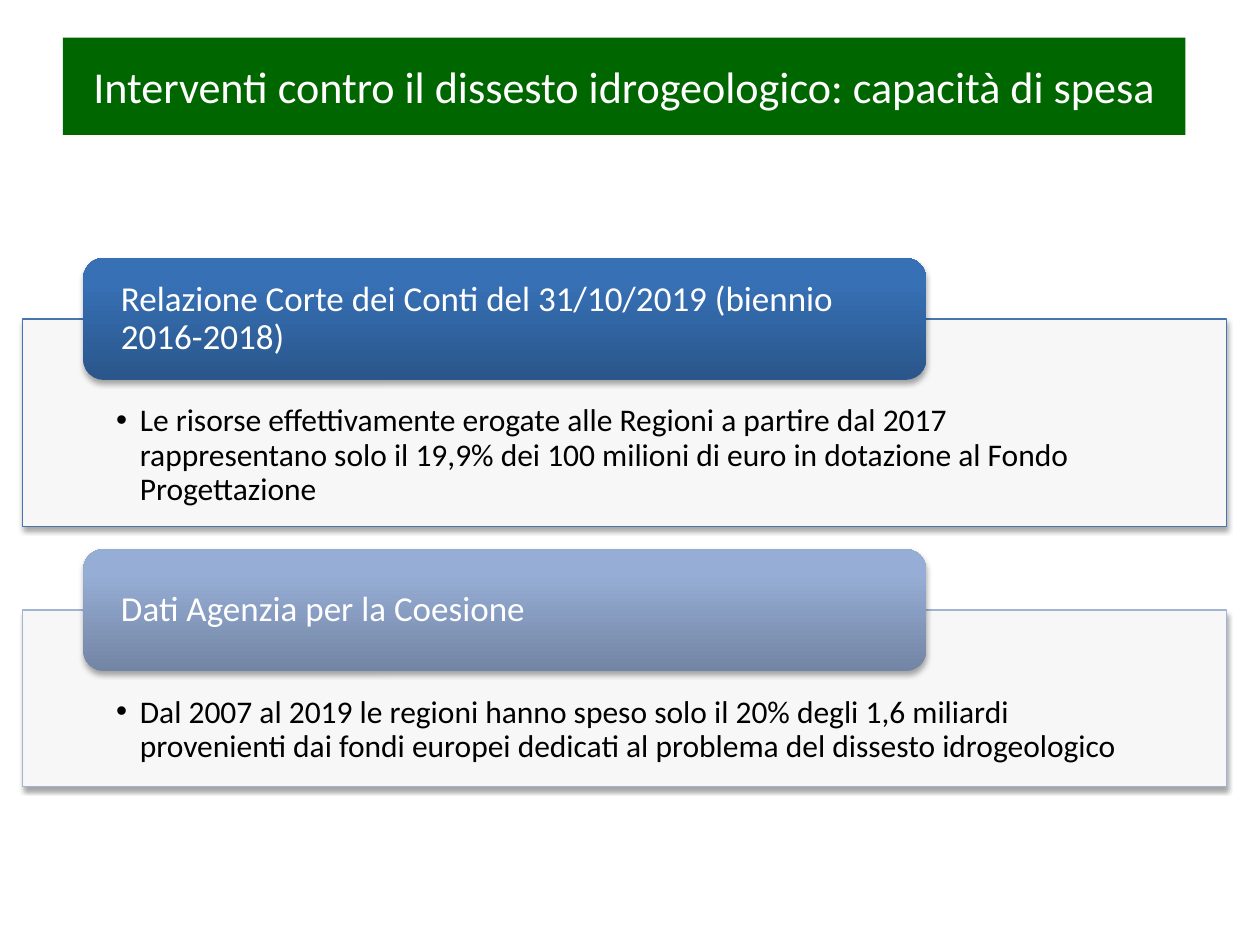
from lxml.etree import SubElement
from pptx import Presentation
from pptx.dml.color import RGBColor
from pptx.enum.shapes import MSO_SHAPE
from pptx.enum.text import MSO_ANCHOR, PP_ALIGN
from pptx.oxml import parse_xml
from pptx.oxml.ns import nsdecls, qn
from pptx.util import Cm, Pt

TITLE = "Interventi contro il dissesto idrogeologico: capacità di spesa"
SECTIONS = [
    {
        "heading": "Relazione Corte dei Conti del 31/10/2019 (biennio 2016-2018)",
        "detail": "Le risorse effettivamente erogate alle Regioni a partire dal 2017 "
                  "rappresentano solo il 19,9% dei 100 milioni di euro in dotazione "
                  "al Fondo Progettazione",
        "height": 4.19,
        "outline": "4875AC",
        "gradient": [(0, "2A568B"), (80, "3770B5"), (100, "3570B8")],
    },
    {
        "heading": "Dati Agenzia per la Coesione",
        "detail": "Dal 2007 al 2019 le regioni hanno speso solo il 20% degli 1,6 miliardi "
                  "provenienti dai fondi europei dedicati al problema del dissesto "
                  "idrogeologico",
        "height": 3.56,
        "outline": "A2B4D4",
        "gradient": [(0, "7385A4"), (80, "96ADD5"), (100, "95ADD7")],
    },
]
FONT = "Calibri"
FIRST_TOP = 5.2
HEADING_HEIGHT = 2.46
SECTION_GAP = 0.45
BULLET_INDENT = 0.48


def color(value):
    return RGBColor.from_string(value)


def add_block(slide, kind, left, top, width, height):
    shape = slide.shapes.add_shape(kind, Cm(left), Cm(top), Cm(width), Cm(height))
    shape.shadow.inherit = False
    shape.line.fill.background()
    return shape


def set_fill(shape, value):
    shape.fill.solid()
    shape.fill.fore_color.rgb = color(value)


def set_text(shape, text, size, text_color, insets, anchor, alignment=PP_ALIGN.LEFT, spacing=0.9):
    frame = shape.text_frame
    frame.text = text
    frame.word_wrap = True
    frame.vertical_anchor = anchor
    frame.margin_left, frame.margin_top, frame.margin_right, frame.margin_bottom = map(Cm, insets)
    paragraph = frame.paragraphs[0]
    paragraph.alignment = alignment
    paragraph.line_spacing = spacing
    font = paragraph.runs[0].font
    font.name = FONT
    font.size = Pt(size)
    font.color.rgb = color(text_color)
    return paragraph


def add_bullet(paragraph):
    properties = paragraph._p.get_or_add_pPr()
    properties.set("marL", str(Cm(BULLET_INDENT)))
    properties.set("indent", str(-Cm(BULLET_INDENT)))
    SubElement(properties, qn("a:buFont"), typeface="Arial")
    SubElement(properties, qn("a:buChar"), char="•")


def add_shadow(shape):
    effects = shape._element.spPr.find(qn("a:effectLst"))
    effects.append(parse_xml(
        f'<a:outerShdw {nsdecls("a")} blurRad="{Pt(3.1)}" dist="{Pt(1.8)}" dir="5400000" '
        'rotWithShape="0"><a:srgbClr val="000000"><a:alpha val="35000"/></a:srgbClr></a:outerShdw>'))


def set_gradient(shape, stops):
    shape.fill.background()
    stop_xml = "".join(
        f'<a:gs pos="{position * 1000}"><a:srgbClr val="{value}"/></a:gs>'
        for position, value in stops)
    gradient = parse_xml(
        f'<a:gradFill {nsdecls("a")} rotWithShape="1"><a:gsLst>{stop_xml}</a:gsLst>'
        '<a:lin ang="16200000" scaled="0"/></a:gradFill>')
    properties = shape._element.spPr
    properties.replace(properties.find(qn("a:noFill")), gradient)


def add_section(slide, section, top):
    box = add_block(slide, MSO_SHAPE.RECTANGLE, 0.46, top + HEADING_HEIGHT / 2, 24.26,
                    section["height"])
    set_fill(box, "F7F7F7")
    box.line.color.rgb = color(section["outline"])
    box.line.width = Pt(0.75)
    add_shadow(box)
    add_bullet(set_text(box, section["detail"], 18, "000000", (1.88, 1.73, 1.88, 0.36),
                        MSO_ANCHOR.TOP))

    heading = add_block(slide, MSO_SHAPE.ROUNDED_RECTANGLE, 1.68, top, 16.99, HEADING_HEIGHT)
    set_gradient(heading, section["gradient"])
    add_shadow(heading)
    set_text(heading, section["heading"], 20, "FFFFFF", (0.64, 0, 0.64, 0), MSO_ANCHOR.MIDDLE)


def main():
    presentation = Presentation()
    presentation.slide_width, presentation.slide_height = Cm(25.4), Cm(19.05)
    slide = presentation.slides.add_slide(presentation.slide_layouts[6])

    title = add_block(slide, MSO_SHAPE.RECTANGLE, 1.27, 0.76, 22.63, 1.96)
    set_fill(title, "006600")
    set_text(title, TITLE, 25.2, "FFFFFF", (0.25, 0.13, 0.25, 0.13), MSO_ANCHOR.MIDDLE,
             PP_ALIGN.CENTER, 1.0)

    top = FIRST_TOP
    for section in SECTIONS:
        add_section(slide, section, top)
        top += HEADING_HEIGHT / 2 + section["height"] + SECTION_GAP

    presentation.save("out.pptx")


if __name__ == "__main__":
    main()
